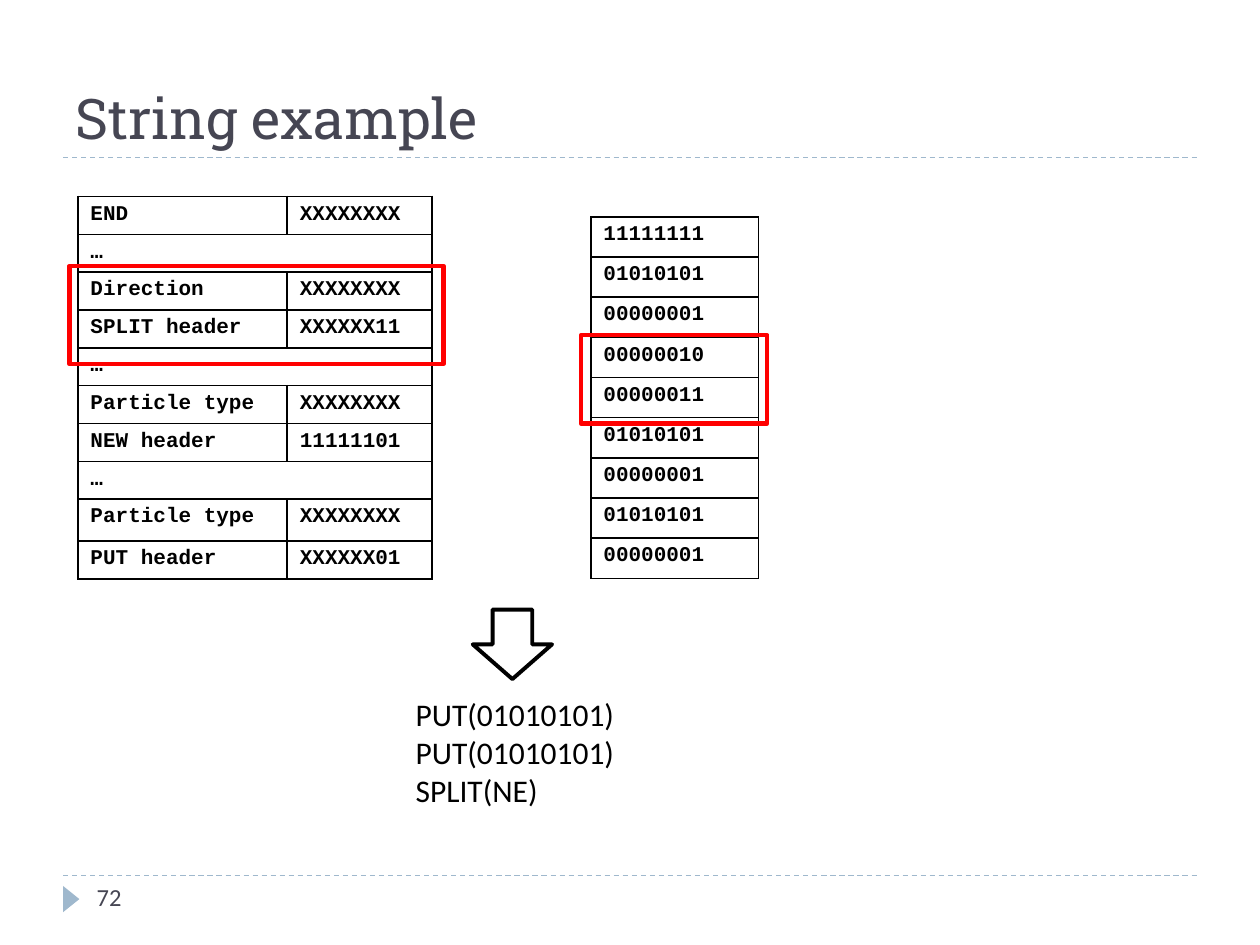
"""Build the slide that decodes a bit string into PUT and SPLIT steps."""
from lxml import etree
from pptx import Presentation
from pptx import util as u
from pptx.dml.color import RGBColor
from pptx.enum import dml, shapes, text
from pptx.oxml.ns import qn

BLACK = RGBColor(0, 0, 0)
RED = RGBColor(255, 0, 0)
SLATE = RGBColor(0x46, 0x46, 0x53)
BLUE = RGBColor(0x9F, 0xB8, 0xCD)

TITLE = "String example"
NUMBER = "72"
STEPS = ["PUT(01010101)", "PUT(01010101)", "SPLIT(NE)"]
FIELDS = [
    ("END", "XXXXXXXX"),
    ("…",),
    ("Direction", "XXXXXXXX"),
    ("SPLIT header", "XXXXXX11"),
    ("…",),
    ("Particle type", "XXXXXXXX"),
    ("NEW header", "11111101"),
    ("…",),
    ("Particle type", "XXXXXXXX"),
    ("PUT header", "XXXXXX01"),
]
BYTES = [
    ("11111111",), ("01010101",), ("00000001",),
    ("00000010",), ("00000011",), ("01010101",),
    ("00000001",), ("01010101",), ("00000001",),
]
FIELD_TALLS = [0.73] * 8 + [0.84, 0.73]
BYTE_TALLS = [0.81] * len(BYTES)
RULES = [17.65, 3.18]
FRAMES = [(1.4, 5.36, 7.54, 1.98), (11.71, 6.76, 3.76, 1.78)]


def place(box):
    return [u.Cm(n) for n in box]


def style(frame, size, font, color, bold=False):
    for para in frame.paragraphs:
        para.alignment = text.PP_ALIGN.LEFT
        for run in para.runs:
            run.font.size = u.Pt(size)
            run.font.name = font
            run.font.color.rgb = color
            run.font.bold = bold


def edge(cell):
    props = cell._tc.get_or_add_tcPr()
    for spot, side in enumerate(("lnL", "lnR", "lnT", "lnB")):
        line = etree.Element(qn(f"a:{side}"), w=str(u.Pt(1)))
        fill = etree.SubElement(line, qn("a:solidFill"))
        etree.SubElement(fill, qn("a:srgbClr"), val=str(BLACK))
        props.insert(spot, line)


def add_grid(slide, rows, left, top, wides, talls):
    box = place((left, top, sum(wides), sum(talls)))
    grid = slide.shapes.add_table(len(rows), len(wides), *box).table
    grid.first_row = grid.horz_banding = False
    for col, wide in zip(grid.columns, wides):
        col.width = u.Cm(wide)
    for r, (words, tall) in enumerate(zip(rows, talls)):
        grid.rows[r].height = u.Cm(tall)
        for c in range(len(wides)):
            cell = grid.cell(r, c)
            cell.fill.background()
            edge(cell)
        if len(words) < len(wides):
            grid.cell(r, 0).merge(grid.cell(r, len(wides) - 1))
        for c, word in enumerate(words):
            frame = grid.cell(r, c).text_frame
            frame.text = word
            style(frame, 12, "Courier New", BLACK, True)


def add_rule(slide, y):
    ends = place((1.27, y, 24.13, y))
    rule = slide.shapes.add_connector(shapes.MSO_CONNECTOR.STRAIGHT, *ends)
    rule.line.color.rgb = BLUE
    rule.line.width = u.Pt(0.75)
    rule.line.dash_style = dml.MSO_LINE.DASH
    etree.SubElement(rule._element.spPr, qn("a:effectLst"))


def add_form(slide, kind, box, line=None, width=0, fill=None):
    form = slide.shapes.add_shape(kind, *place(box))
    form.shadow.inherit = False
    if fill:
        form.fill.solid()
        form.fill.fore_color.rgb = fill
    else:
        form.fill.background()
    if line:
        form.line.color.rgb = line
        form.line.width = u.Pt(width)
    else:
        form.line.fill.background()
    return form


def add_text(slide, words, box, size, color):
    frame = slide.shapes.add_textbox(*place(box)).text_frame
    frame.word_wrap = False
    frame.text = words
    style(frame, size, "Calibri", color)


def main():
    deck = Presentation()
    deck.slide_width, deck.slide_height = u.Cm(25.4), u.Cm(19.05)
    slide = deck.slides.add_slide(deck.slide_layouts[5])
    kinds = shapes.MSO_SHAPE

    for y in RULES:
        add_rule(slide, y)
    mark = add_form(slide, kinds.ISOSCELES_TRIANGLE,
                    (1.17, 17.96, 0.53, 0.33), fill=BLUE)
    mark.rotation = 90

    title = slide.shapes.title
    title.left, title.top, title.width, title.height = place(
        (1.27, 0.43, 22.86, 2.74))
    title.text_frame.text = TITLE
    title.text_frame.vertical_anchor = text.MSO_ANCHOR.BOTTOM
    style(title.text_frame, 32, "Roboto Slab", SLATE)
    add_text(slide, NUMBER, (1.7, 17.65, 5.51, 1.02), 14, SLATE)

    add_grid(slide, FIELDS, 1.57, 3.96, [4.22, 2.92], FIELD_TALLS)
    add_grid(slide, BYTES, 11.91, 4.37, [3.38], BYTE_TALLS)
    for box in FRAMES:
        add_form(slide, kinds.RECTANGLE, box, RED, 2.5)
    add_text(slide, "\n".join(STEPS), (8.13, 13.89, 5.08, 2.57), 18, BLACK)
    add_form(slide, kinds.DOWN_ARROW, (9.53, 12.29, 1.6, 1.4), BLACK, 2.25)
    deck.save("out.pptx")


if __name__ == "__main__":
    main()
